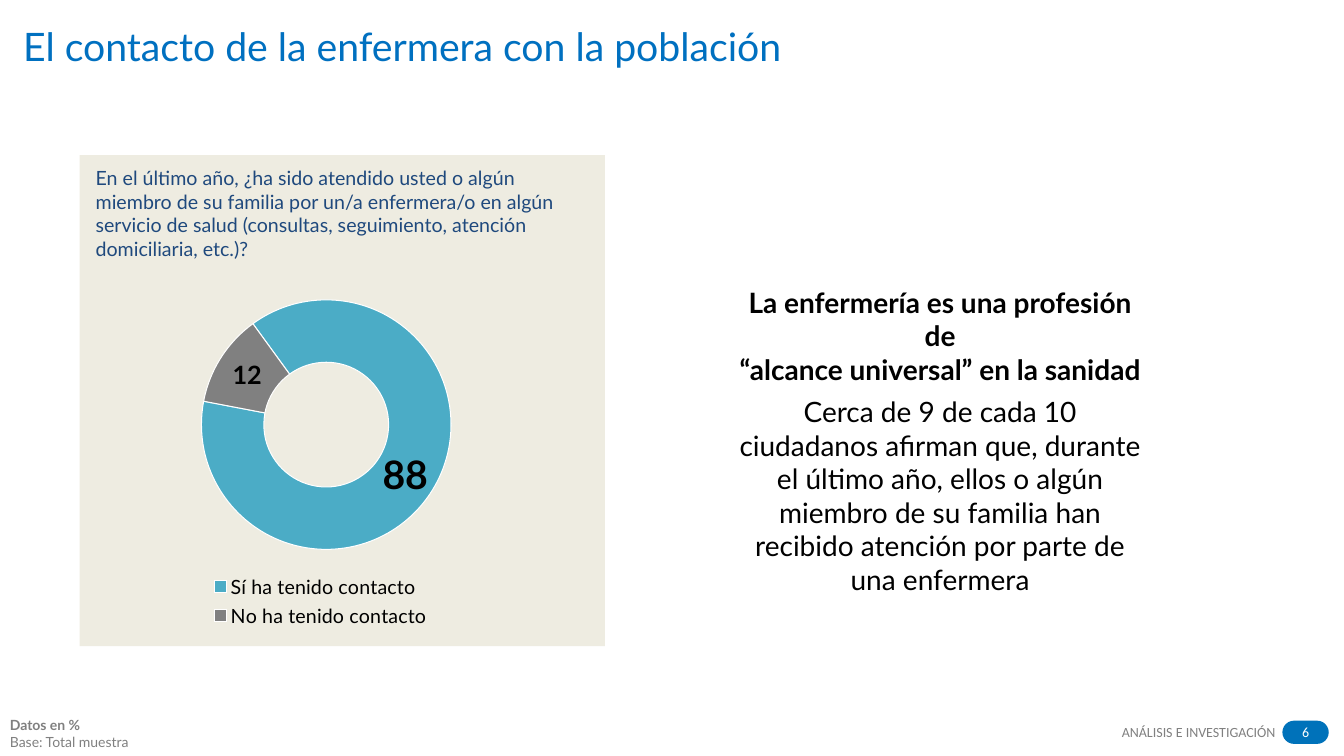
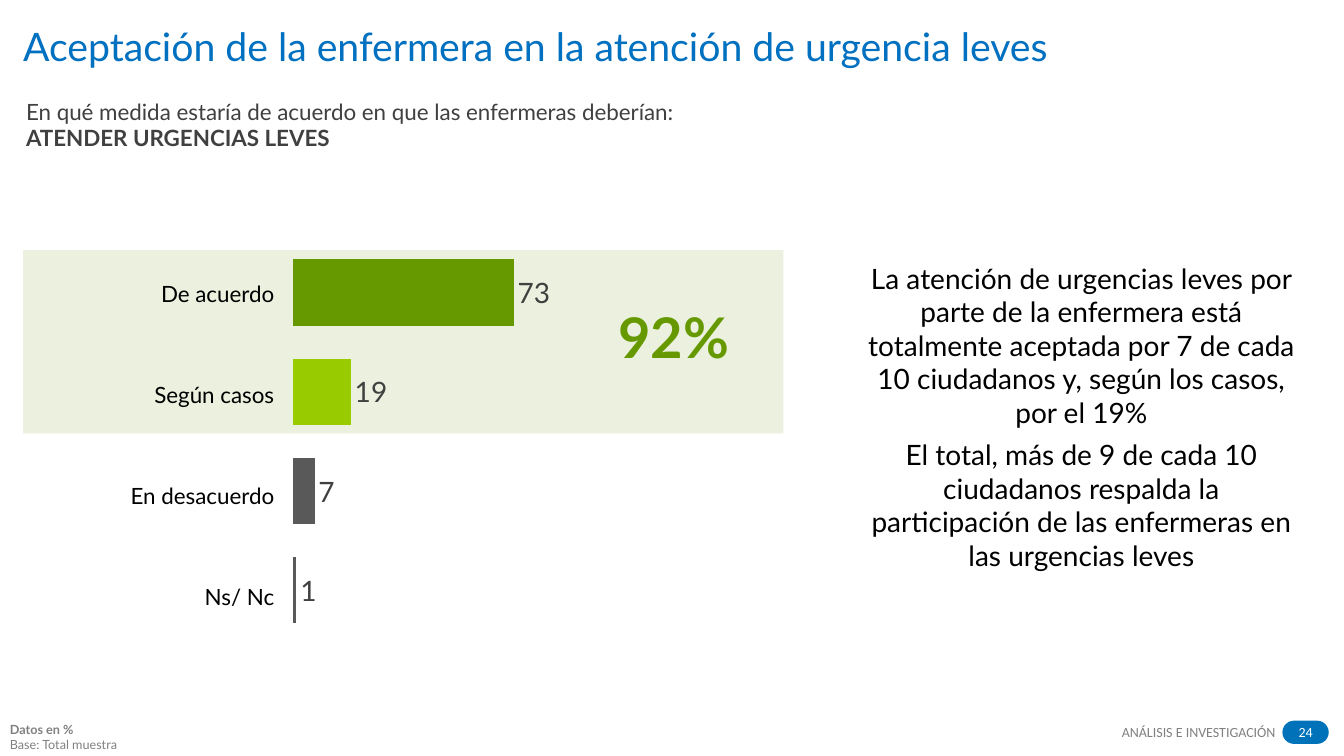
from lxml.etree import SubElement
from pptx import Presentation
from pptx.chart.data import CategoryChartData
from pptx.dml.color import RGBColor
from pptx.enum.chart import XL_CHART_TYPE, XL_LABEL_POSITION, XL_LEGEND_POSITION
from pptx.enum.shapes import MSO_SHAPE
from pptx.enum.text import MSO_ANCHOR, PP_ALIGN
from pptx.oxml.ns import qn
from pptx.util import Inches, Pt


class Theme:
    font, footer_font = "Lato", "Calibri"
    title, pill = RGBColor.from_string("0070C0"), RGBColor.from_string("0072BA")
    question, body = RGBColor.from_string("1F497D"), RGBColor.from_string("000000")
    dark, muted = RGBColor.from_string("404040"), RGBColor.from_string("808080")
    white = RGBColor.from_string("FFFFFF")
    sand, pale_green = RGBColor.from_string("EEECE1"), RGBColor.from_string("EBF1DE")
    teal, green = RGBColor.from_string("4BACC6"), RGBColor.from_string("669900")
    lime, charcoal = RGBColor.from_string("99CC00"), RGBColor.from_string("595959")
    title_size, body_size, question_size = Pt(28), Pt(20), Pt(16)
    small_size, footer_size, total_size = Pt(14), Pt(10), Pt(40)
    paragraph_gap = Pt(6)
    no_table_style = "{2D5ABB26-0587-4C30-8999-92F81FD0307C}"


presentation = Presentation()
presentation.slide_width, presentation.slide_height = Inches(13.33), Inches(7.5)
column = presentation.slide_width / 100
row = presentation.slide_height / 100


def area(left, top, width, height):
    """Turn hundredths of the slide into a position and size."""
    return int(left * column), int(top * row), int(width * column), int(height * row)


def add_text(slide, place, paragraphs, size, color, font=Theme.font,
             align=PP_ALIGN.LEFT, anchor=MSO_ANCHOR.TOP, gap=Pt(0)):
    """Add a text box; each paragraph is a pair of text and bold."""
    frame = slide.shapes.add_textbox(*place).text_frame
    frame.word_wrap = True
    frame.vertical_anchor = anchor
    for index, (text, bold) in enumerate(paragraphs):
        paragraph = frame.paragraphs[0] if index == 0 else frame.add_paragraph()
        paragraph.text = text
        paragraph.alignment = align
        paragraph.space_after = gap
        paragraph.font.name, paragraph.font.size = font, size
        paragraph.font.bold, paragraph.font.color.rgb = bold, color


# Shared parts: title, panel, base note and footer
pages = [
    ("El contacto de la enfermera con la población", "6", Pt(10), 94.13,
     area(5.93, 20.53, 39.08, 64.93), Theme.sand),
    ("Aceptación de la enfermera en la atención de urgencia leves", "24", Pt(9), 94.8,
     area(1.73, 33.07, 56.56, 24.27), Theme.pale_green),
]
slides = []
for title, number, note_size, note_top, panel_area, panel_color in pages:
    slide = presentation.slides.add_slide(presentation.slide_layouts[6])
    slides.append(slide)
    panel = slide.shapes.add_shape(MSO_SHAPE.RECTANGLE, *panel_area)
    pill = slide.shapes.add_shape(MSO_SHAPE.ROUNDED_RECTANGLE,
                                  *area(95.42, 95.33, 3.45, 3.07))
    pill.adjustments[0] = 0.5
    for shape, color in ((panel, panel_color), (pill, Theme.pill)):
        shape.shadow.inherit = False
        shape.fill.solid()
        shape.fill.fore_color.rgb = color
        shape.line.fill.background()
    frame = pill.text_frame
    frame.margin_left = frame.margin_right = frame.margin_top = frame.margin_bottom = 0
    frame.vertical_anchor = MSO_ANCHOR.MIDDLE
    paragraph = frame.paragraphs[0]
    paragraph.text = number
    paragraph.alignment = PP_ALIGN.CENTER
    paragraph.font.name, paragraph.font.size = Theme.footer_font, Theme.footer_size
    paragraph.font.color.rgb = Theme.white
    add_text(slide, area(77.64, 95.07, 18, 3.6), [("ANÁLISIS E INVESTIGACIÓN", False)],
             Theme.footer_size, Theme.muted, Theme.footer_font,
             PP_ALIGN.RIGHT, MSO_ANCHOR.MIDDLE)
    add_text(slide, area(0.98, 2.27, 85.07, 7.6), [(title, False)],
             Theme.title_size, Theme.title)
    add_text(slide, area(0, note_top, 20, 100 - note_top),
             [("Datos en %", True), ("Base: Total muestra", False)],
             note_size, Theme.muted)
contact_slide, urgency_slide = slides

# Contact slide: question and conclusion
add_text(contact_slide, area(6.38, 21.33, 38.03, 13.87),
         [("En el último año, ¿ha sido atendido usted o algún miembro de su familia por "
           "un/a enfermera/o en algún servicio de salud (consultas, seguimiento, "
           "atención domiciliaria, etc.)?", False)],
         Theme.small_size, Theme.question)
add_text(contact_slide, area(53.86, 37.07, 32.18, 33.87),
         [("La enfermería es una profesión de\v“alcance universal” en la sanidad", True),
          ("Cerca de 9 de cada 10 ciudadanos afirman que, durante el último año, ellos o "
           "algún miembro de su familia han recibido atención por parte de una enfermera",
           False)],
         Theme.body_size, Theme.body, align=PP_ALIGN.CENTER, gap=Theme.paragraph_gap)

# Contact slide: doughnut chart
contact_data = CategoryChartData(number_format="#,##0")
contact_data.categories = ["Sí ha tenido contacto", "No ha tenido contacto"]
contact_data.add_series("Contacto", (88, 12))
doughnut = contact_slide.shapes.add_chart(
    XL_CHART_TYPE.DOUGHNUT, *area(2.78, 36, 41.34, 52.4), contact_data).chart
doughnut.has_title = False
doughnut.font.name, doughnut.font.size = Theme.font, Pt(18)
doughnut.font.color.rgb = Theme.body
doughnut.has_legend = True
doughnut.legend.position = XL_LEGEND_POSITION.BOTTOM
doughnut.legend.include_in_layout = False
doughnut.legend.font.name, doughnut.legend.font.size = Theme.font, Theme.small_size
ring = doughnut.plots[0]
ring.vary_by_categories = True
ring.has_data_labels = True
ring.data_labels.show_value, ring.data_labels.show_percentage = True, False
for index, (color, size) in enumerate(((Theme.teal, Pt(28)), (Theme.muted, Pt(18)))):
    point = ring.series[0].points[index]
    point.format.fill.solid()
    point.format.fill.fore_color.rgb = color
    point.format.line.color.rgb = Theme.white
    point.format.line.width = Pt(0.75)
    label_font = point.data_label.font
    label_font.name, label_font.size, label_font.bold = Theme.font, size, True
    label_font.color.rgb = Theme.body
for tag, value in (("c:firstSliceAng", "324"), ("c:holeSize", "56")):
    for element in doughnut.element.iter(qn(tag)):
        element.set("val", value)

# Urgency slide: question, total and conclusion
add_text(urgency_slide, area(1.2, 12.27, 80.12, 8.53),
         [("En qué medida estaría de acuerdo en que las enfermeras deberían:", False),
          ("ATENDER URGENCIAS LEVES", True)],
         Theme.question_size, Theme.dark)
add_text(urgency_slide, area(63.62, 33.87, 33.68, 42.8),
         [("La atención de urgencias leves por parte de la enfermera está totalmente "
           "aceptada por 7 de cada 10 ciudadanos y, según los casos, por el 19%", False),
          ("El total, más de 9 de cada 10 ciudadanos respalda la participación de las "
           "enfermeras en las urgencias leves", False)],
         Theme.body_size, Theme.body, align=PP_ALIGN.CENTER, gap=Theme.paragraph_gap)
add_text(urgency_slide, area(44.94, 40.8, 10.35, 7.33), [("92%", True)],
         Theme.total_size, Theme.green, align=PP_ALIGN.CENTER, anchor=MSO_ANCHOR.MIDDLE)

# Urgency slide: bar chart
answers = [("De acuerdo", 73, Theme.green), ("Según casos", 19, Theme.lime),
           ("En desacuerdo", 7, Theme.charcoal), ("Ns/ Nc", 1, Theme.charcoal)]
urgency_data = CategoryChartData(number_format="#,##0")
urgency_data.categories = [answer for answer, _, _ in answers]
urgency_data.add_series("Acuerdo", [value for _, value, _ in answers])
bar_chart = urgency_slide.shapes.add_chart(
    XL_CHART_TYPE.BAR_CLUSTERED, *area(21.83, 32.13, 26.41, 53.07), urgency_data).chart
bar_chart.has_title = bar_chart.has_legend = False
bar_chart.font.name, bar_chart.font.size = Theme.font, Theme.body_size
bar_chart.font.color.rgb = Theme.dark
bar_chart.category_axis.reverse_order = True
bar_chart.value_axis.minimum_scale, bar_chart.value_axis.maximum_scale = 0, 100
bar_chart.value_axis.has_major_gridlines = False
bar_chart.category_axis.visible = bar_chart.value_axis.visible = False
bars = bar_chart.plots[0]
bars.vary_by_categories = False
bars.gap_width = 50
bars.has_data_labels = True
bars.data_labels.show_value = True
bars.data_labels.position = XL_LABEL_POSITION.OUTSIDE_END
for index, (_, _, color) in enumerate(answers):
    fill = bars.series[0].points[index].format.fill
    fill.solid()
    fill.fore_color.rgb = color

# Urgency slide: table of answers beside the bars
table_frame = urgency_slide.shapes.add_table(
    len(answers), 1, *area(8.63, 32.13, 11.85, 53.47))
table = table_frame.table
table.first_row = table.horz_banding = False
for style in table_frame.element.iter(qn("a:tableStyleId")):
    style.text = Theme.no_table_style
for index, (answer, _, _) in enumerate(answers):
    cell = table.cell(index, 0)
    cell.fill.background()
    cell.vertical_anchor = MSO_ANCHOR.MIDDLE
    cell.margin_left = cell.margin_right = cell.margin_top = Inches(0.01)
    cell.margin_bottom = 0
    paragraph = cell.text_frame.paragraphs[0]
    paragraph.text = answer
    paragraph.alignment = PP_ALIGN.RIGHT
    paragraph.font.name, paragraph.font.size = Theme.font, Theme.question_size
    paragraph.font.color.rgb = Theme.body

# Fixed places of plots and legend, as shares of their chart
chart_layouts = [
    (doughnut, "c:plotArea", 0, (0.29, 0.07, 0.46, 0.63)),
    (doughnut, "c:legend", 1, (0.3, 0.75, 0.42, 0.16)),
    (bar_chart, "c:plotArea", 0, (0, 0, 0.85, 0.99)),
]
for chart, tag, position, shares in chart_layouts:
    parent = next(chart.element.iter(qn(tag)))
    for old_layout in parent.findall(qn("c:layout")):
        parent.remove(old_layout)
    layout = SubElement(parent, qn("c:layout"))
    parent.insert(position, layout)
    manual = SubElement(layout, qn("c:manualLayout"))
    settings = [("xMode", "edge"), ("yMode", "edge"), *zip("xywh", shares)]
    if tag == "c:plotArea":
        settings.insert(0, ("layoutTarget", "inner"))
    for name, value in settings:
        SubElement(manual, qn(f"c:{name}")).set("val", str(value))

presentation.save("out.pptx")
